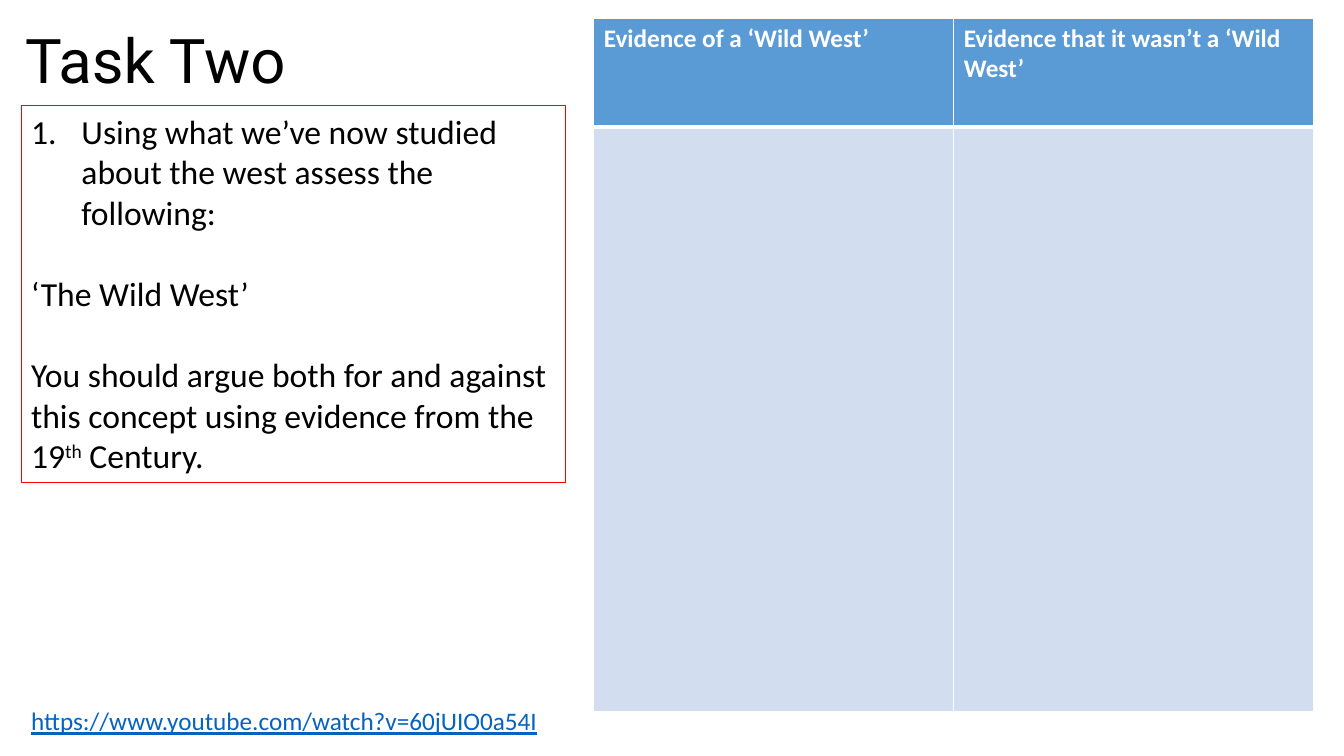
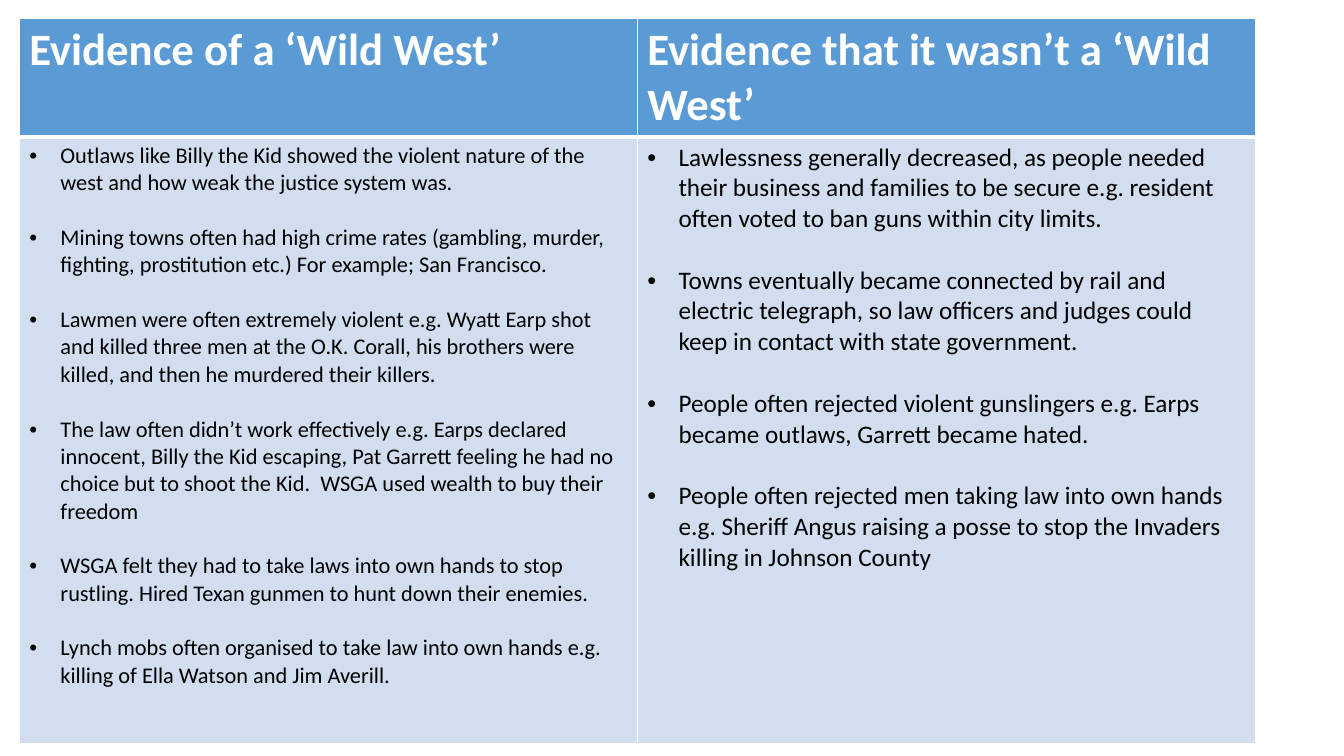
from dataclasses import dataclass

from lxml import etree
from pptx import Presentation
from pptx.dml.color import RGBColor
from pptx.enum.shapes import MSO_SHAPE
from pptx.enum.text import MSO_ANCHOR, PP_ALIGN
from pptx.oxml.ns import qn
from pptx.util import Pt

RECT = MSO_SHAPE.RECTANGLE
TOP = MSO_ANCHOR.TOP
LEFT = PP_ALIGN.LEFT
PX = 9144


@dataclass(frozen=True)
class Theme:
    face: str = "Calibri"
    title_face: str = "Roboto"
    ink: str = "000000"
    white: str = "FFFFFF"
    red: str = "FF0000"
    link: str = "0563C1"
    head: str = "5B9BD5"
    body: str = "D2DEEF"
    title: int = 44
    big: int = 32
    task: int = 24
    text: int = 18
    small: int = 16
    thin: int = 1
    thick: int = 3
    lead: float = 1.22


THEME = Theme()
MARKS = {
    "dot": (31, (("buFont", "typeface", "Arial"), ("buChar", "char", "•"))),
    "count": (50, (("buFont", "typeface", "+mj-lt"), ("buAutoNum", "type", "arabicPeriod"))),
}
HEADS = ("Evidence of a ‘Wild West’", "Evidence that it wasn’t a ‘Wild West’")
TASK = (
    ("Using what we’ve now studied about the west assess the following:", "count"),
    ("‘The Wild West’", None),
    ("You should argue both for and against this concept using evidence from the 19^th^ Century.", None),
)
WILD = (
    "Outlaws like Billy the Kid showed the violent nature of the west and how weak the justice system was.",
    "Mining towns often had high crime rates (gambling, murder, fighting, prostitution etc.) For example; San Francisco.",
    "Lawmen were often extremely violent e.g. Wyatt Earp shot and killed three men at the O.K. Corall, his brothers were killed, and then he murdered their killers.",
    "The law often didn’t work effectively e.g. Earps declared innocent, Billy the Kid escaping, Pat Garrett feeling he had no choice but to shoot the Kid.  WSGA used wealth to buy their freedom",
    "WSGA felt they had to take laws into own hands to stop rustling. Hired Texan gunmen to hunt down their enemies.",
    "Lynch mobs often organised to take law into own hands e.g. killing of Ella Watson and Jim Averill.",
)
TAME = (
    "Lawlessness generally decreased, as people needed their business and families to be secure e.g. resident often voted to ban guns within city limits.",
    "Towns eventually became connected by rail and electric telegraph, so law officers and judges could keep in contact with state government.",
    "People often rejected violent gunslingers e.g. Earps became outlaws, Garrett became hated.",
    "People often rejected men taking law into own hands e.g. Sheriff Angus raising a posse to stop the Invaders killing in Johnson County",
)


def scale(*spans):
    return [span * PX for span in spans]


def apply(thing, **values):
    for name, value in values.items():
        setattr(thing, name, value)


def dots(texts):
    return [(text, "dot") for text in texts]


class Deck:
    def __init__(self, theme):
        self.theme = theme
        self.show = Presentation()
        wide, high = scale(1333, 750)
        apply(self.show, slide_width=wide, slide_height=high)
        self.slide = None

    def page(self):
        self.slide = self.show.slides.add_slide(self.show.slide_layouts[6])

    def words(self, frame, lines, size, tint=None, face=None, **font):
        frame.word_wrap = True
        for at, (text, mark) in enumerate(lines):
            para = frame.paragraphs[0] if at == 0 else frame.add_paragraph()
            para.alignment = LEFT
            if at:
                para.space_before = Pt(round(size * self.theme.lead, 1))
            if mark:
                self.mark(para, mark)
            for turn, part in enumerate(text.split("^")):
                run = para.add_run()
                run.text = part
                apply(run.font, size=Pt(size), name=face or self.theme.face, **font)
                run.font.color.rgb = RGBColor.from_string(tint or self.theme.ink)
                if turn % 2:
                    run._r.get_or_add_rPr().set("baseline", "30000")

    def mark(self, para, kind):
        hang, parts = MARKS[kind]
        props = para._p.get_or_add_pPr()
        props.set("marL", str(hang * PX))
        props.set("indent", str(-hang * PX))
        for tag, key, value in parts:
            etree.SubElement(props, qn(f"a:{tag}")).set(key, value)

    def label(self, place, text, size, **style):
        box = self.slide.shapes.add_textbox(*scale(*place))
        self.words(box.text_frame, [(text, None)], size, **style)

    def frame(self, place, lines, size):
        box = self.slide.shapes.add_shape(RECT, *scale(*place))
        box.shadow.inherit = False
        box.fill.background()
        box.line.color.rgb = RGBColor.from_string(self.theme.red)
        box.line.width = Pt(0.75)
        box.text_frame.vertical_anchor = TOP
        self.words(box.text_frame, lines, size)

    def edge(self, cell, **widths):
        props = cell._tc.get_or_add_tcPr()
        for at, (side, width) in enumerate(widths.items()):
            line = etree.Element(qn(f"a:ln{side}"), w=str(Pt(width)))
            fill = etree.SubElement(line, qn("a:solidFill"))
            etree.SubElement(fill, qn("a:srgbClr")).set("val", self.theme.white)
            props.insert(at, line)

    def table(self, place, head, size, lists):
        look = self.theme
        left, top, wide, high = place
        grid = self.slide.shapes.add_table(2, 2, *scale(left, top, wide, high)).table
        apply(grid, first_row=False, horz_banding=False)
        for row, tall in zip(grid.rows, (head, high - head)):
            row.height = tall * PX
        for col, (title, (items, small)) in enumerate(zip(HEADS, lists)):
            grid.columns[col].width = wide * PX // 2
            cells = grid.cell(0, col), grid.cell(1, col)
            for cell, tint in zip(cells, (look.head, look.body)):
                cell.fill.solid()
                cell.fill.fore_color.rgb = RGBColor.from_string(tint)
            self.edge(cells[0], L=look.thin, R=look.thin, T=look.thin, B=look.thick)
            self.edge(cells[1], L=look.thin, R=look.thin, T=look.thick, B=look.thin)
            self.words(cells[0].text_frame, [(title, None)], size, look.white, bold=True)
            self.words(cells[1].text_frame, dots(items), small)


def main():
    deck = Deck(THEME)
    deck.page()
    deck.frame((21, 105, 540, 374), TASK, THEME.task)
    deck.label((21, 695, 560, 40), "https://www.youtube.com/watch?v=60jUIO0a54I",
               THEME.text, tint=THEME.link, underline=True)
    deck.label((15, 17, 540, 84), "Task Two", THEME.title, face=THEME.title_face)
    blank = ((), THEME.text)
    deck.table((589, 18, 714, 688), 108, THEME.text, (blank, blank))
    deck.page()
    deck.table((19, 18, 1226, 720), 118, THEME.big,
               ((WILD, THEME.small), (TAME, THEME.text)))
    deck.show.save("out.pptx")


if __name__ == "__main__":
    main()
